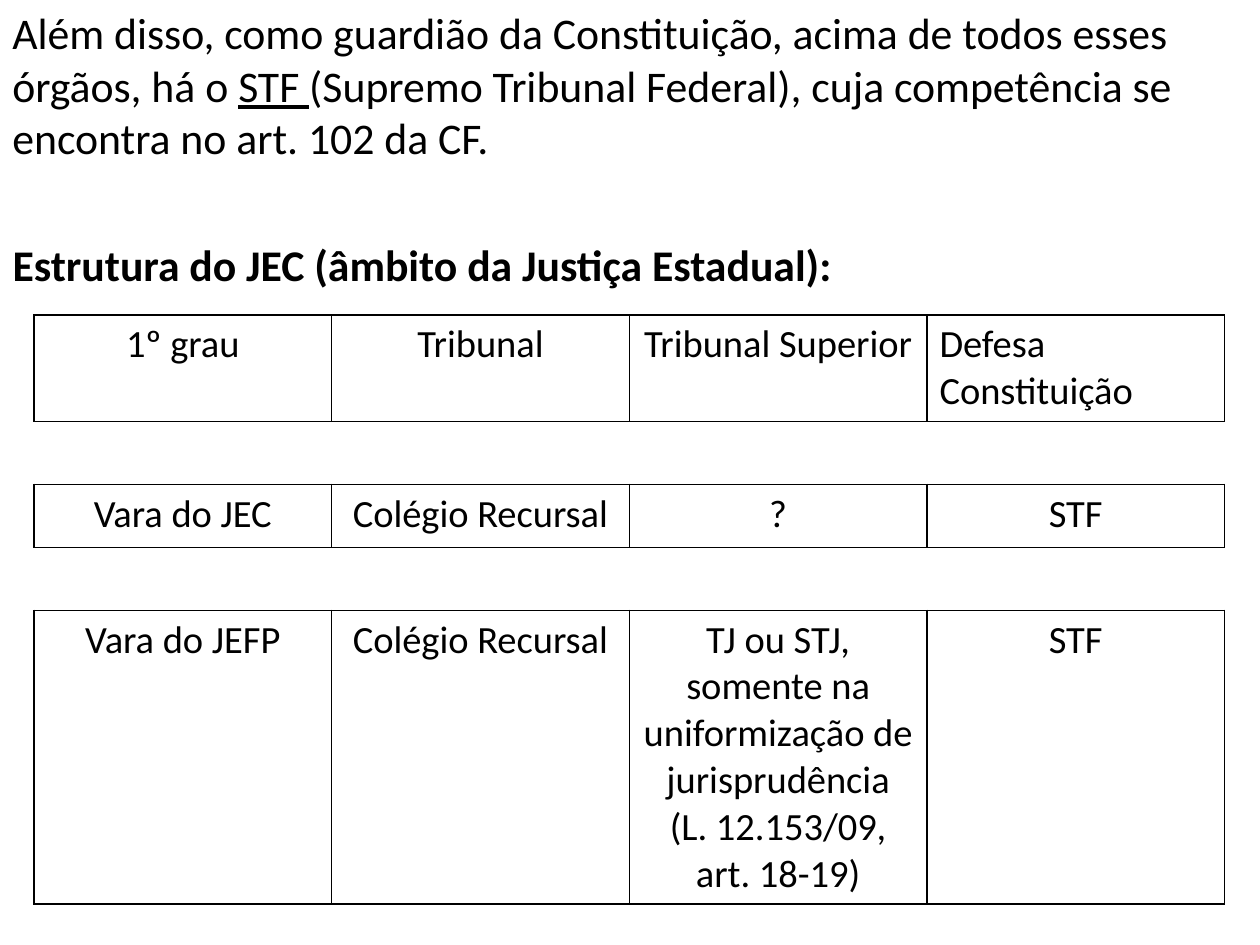
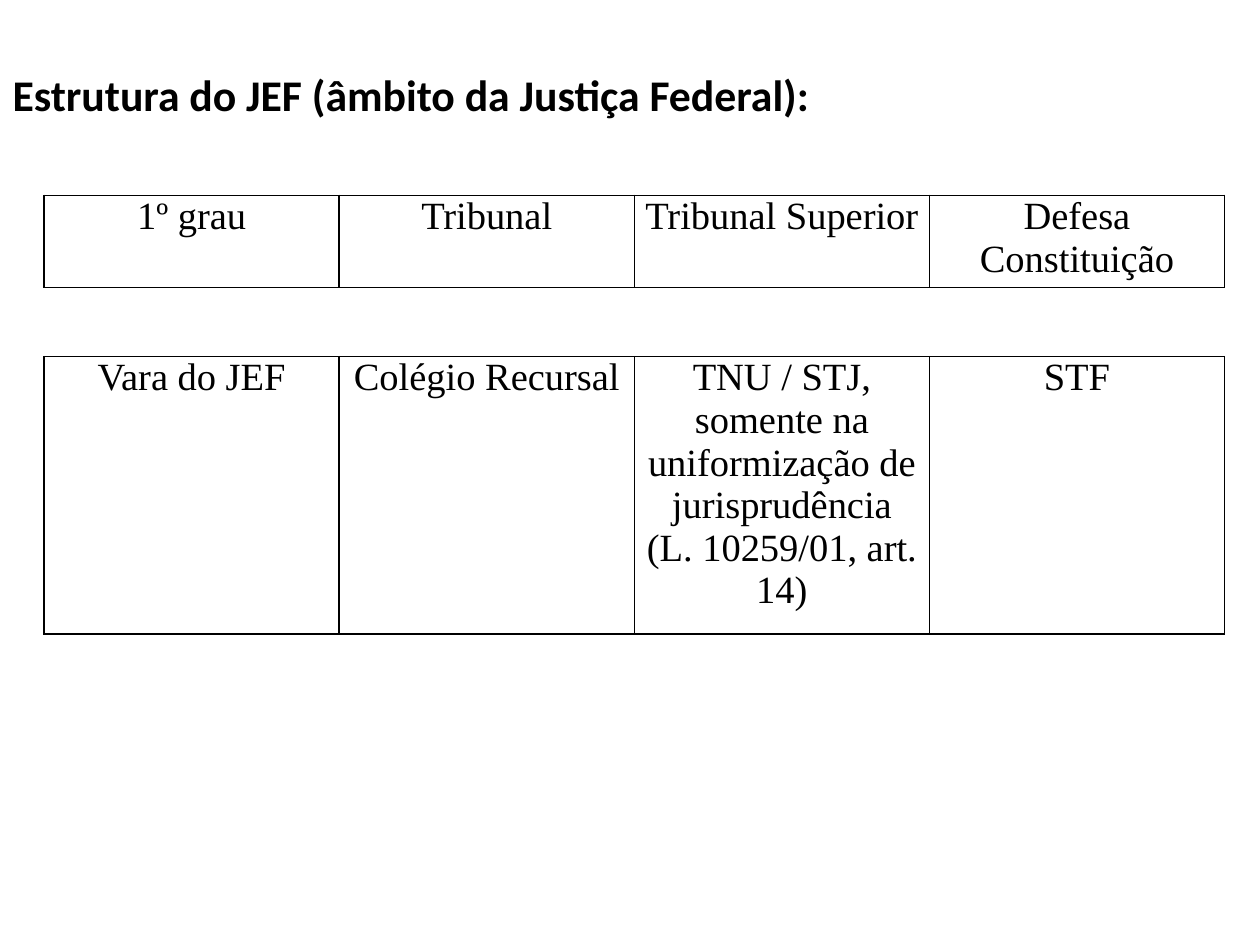
"""Build two slides on the structure of the Brazilian small-claims courts."""
from dataclasses import dataclass
from typing import Any

import lxml.etree
import pptx
import pptx.dml.color
import pptx.enum.text
import pptx.oxml.ns
import pptx.util

Inches = pptx.util.Inches
Align = pptx.enum.text.PP_ALIGN


@dataclass(frozen=True)
class Theme:
    ink: str = "000000"
    body_font: str = "Calibri"
    serif_font: str = "Times New Roman"
    text_size: float = 25
    cell_size: float = 22
    border_width: float = 1


@dataclass(frozen=True)
class CourtTable:
    left: float
    top: float
    width: float
    heights: tuple[float, ...]
    rows: tuple[tuple[str, ...], ...]
    font: str
    margin_x: float
    margin_y: float
    last_header_align: Align


@dataclass(frozen=True)
class CourtSlide:
    heading: str
    heading_top: float
    table: CourtTable
    intro: tuple[tuple[str, bool], ...] = ()


THEME = Theme()
SLIDE_WIDTH, SLIDE_HEIGHT = 10, 7.5
COLUMNS = 4
HEADER = ("1º grau", "Tribunal", "Tribunal Superior", "Defesa Constituição")
SPACER: tuple[str, ...] = ("",) * COLUMNS
FRAME_FORMAT = {
    "word_wrap": True,
    "auto_size": pptx.enum.text.MSO_AUTO_SIZE.NONE,
    "vertical_anchor": pptx.enum.text.MSO_ANCHOR.TOP,
    "margin_left": Inches(0.1),
    "margin_right": Inches(0.1),
    "margin_top": Inches(0.05),
    "margin_bottom": Inches(0.05),
}

SLIDES = (
    CourtSlide(
        heading="Estrutura do JEC (âmbito da Justiça Estadual):",
        heading_top=1.84,
        intro=(
            ("Além disso, como guardião da Constituição, acima de todos esses órgãos, há o ", False),
            ("STF ", True),
            ("(Supremo Tribunal Federal), cuja competência se encontra no art. 102 da CF.", False),
        ),
        table=CourtTable(
            0.27, 2.5, 9.45, (0.84, 0.5, 0.5, 0.5, 2.3),
            (
                HEADER,
                SPACER,
                ("Vara do JEC", "Colégio Recursal", "?", "STF"),
                SPACER,
                ("Vara do JEFP", "Colégio Recursal",
                 "TJ ou STJ, somente na uniformização de jurisprudência\n(L. 12.153/09, art. 18-19)",
                 "STF"),
            ),
            THEME.body_font, 0.1, 0.05, Align.LEFT,
        ),
    ),
    CourtSlide(
        heading="Estrutura do JEF (âmbito da Justiça Federal):",
        heading_top=0.49,
        table=CourtTable(
            0.35, 1.55, 9.37, (0.73, 0.55, 2.2),
            (
                HEADER,
                SPACER,
                ("Vara do JEF", "Colégio Recursal",
                 "TNU / STJ, somente na uniformização de jurisprudência\n(L. 10259/01, art. 14)",
                 "STF"),
            ),
            THEME.serif_font, 0.08, 0, Align.CENTER,
        ),
    ),
)


def set_attributes(target: Any, values: dict[str, Any]) -> None:
    """Set each named attribute on the target."""
    for name, value in values.items():
        setattr(target, name, value)


def style_font(font: Any, name: str, size: float, **extra: Any) -> None:
    """Apply typeface, size, ink colour and any extra font values."""
    set_attributes(font, {"name": name, "size": pptx.util.Pt(size), **extra})
    font.color.rgb = pptx.dml.color.RGBColor.from_string(THEME.ink)


def draw_borders(cell: Any, visible_sides: str) -> None:
    """Draw the visible sides of a cell and clear the others."""
    properties = cell._tc.get_or_add_tcPr()
    qualified = pptx.oxml.ns.qn
    for side in "LRTB":
        line = lxml.etree.SubElement(properties, qualified(f"a:ln{side}"))
        if side in visible_sides:
            line.set("w", str(pptx.util.Pt(THEME.border_width)))
            fill = lxml.etree.SubElement(line, qualified("a:solidFill"))
            lxml.etree.SubElement(fill, qualified("a:srgbClr")).set("val", THEME.ink)
        else:
            lxml.etree.SubElement(line, qualified("a:noFill"))


def draw_table(slide: Any, court: CourtTable) -> None:
    """Draw a court table whose empty rows have no vertical borders."""
    table = slide.shapes.add_table(
        len(court.rows), COLUMNS, Inches(court.left), Inches(court.top),
        Inches(court.width), Inches(sum(court.heights)),
    ).table
    set_attributes(table, {"first_row": False, "horz_banding": False})
    margins = {
        "margin_left": Inches(court.margin_x),
        "margin_right": Inches(court.margin_x),
        "margin_top": Inches(court.margin_y),
        "margin_bottom": Inches(court.margin_y),
    }
    for column in table.columns:
        column.width = Inches(court.width / COLUMNS)
    for row_index, (height, texts) in enumerate(zip(court.heights, court.rows)):
        table.rows[row_index].height = Inches(height)
        for column_index, text in enumerate(texts):
            cell = table.cell(row_index, column_index)
            set_attributes(cell, margins)
            draw_borders(cell, "LRTB" if text else "TB")
            cell.fill.background()
            if not text:
                continue
            cell.text_frame.text = text
            is_last_header = row_index == 0 and column_index == COLUMNS - 1
            for paragraph in cell.text_frame.paragraphs:
                paragraph.alignment = court.last_header_align if is_last_header else Align.CENTER
                for run in paragraph.runs:
                    style_font(run.font, court.font, THEME.cell_size)


def draw_heading(slide: Any, text: str, top: float) -> None:
    """Place and format the title placeholder."""
    title = slide.shapes.title
    set_attributes(title, {
        "left": Inches(0), "top": Inches(top),
        "width": Inches(SLIDE_WIDTH), "height": Inches(0.55),
    })
    set_attributes(title.text_frame, FRAME_FORMAT)
    paragraph = title.text_frame.paragraphs[0]
    paragraph.alignment = Align.LEFT
    run = paragraph.add_run()
    run.text = text
    style_font(run.font, THEME.body_font, THEME.text_size, bold=True)


def draw_intro(slide: Any, parts: tuple[tuple[str, bool], ...]) -> None:
    """Write the opening paragraph with its underlined parts."""
    box = slide.shapes.add_textbox(Inches(0), Inches(0), Inches(SLIDE_WIDTH), Inches(1.4))
    set_attributes(box.text_frame, FRAME_FORMAT)
    paragraph = box.text_frame.paragraphs[0]
    for text, underlined in parts:
        run = paragraph.add_run()
        run.text = text
        style_font(run.font, THEME.body_font, THEME.text_size, underline=underlined)


def main() -> None:
    """Build and save the presentation."""
    presentation = pptx.Presentation()
    set_attributes(presentation, {
        "slide_width": Inches(SLIDE_WIDTH), "slide_height": Inches(SLIDE_HEIGHT),
    })
    title_only = presentation.slide_layouts.get_by_name("Title Only")
    for content in SLIDES:
        slide = presentation.slides.add_slide(title_only)
        draw_heading(slide, content.heading, content.heading_top)
        if content.intro:
            draw_intro(slide, content.intro)
        draw_table(slide, content.table)
    presentation.save("out.pptx")


if __name__ == "__main__":
    main()
